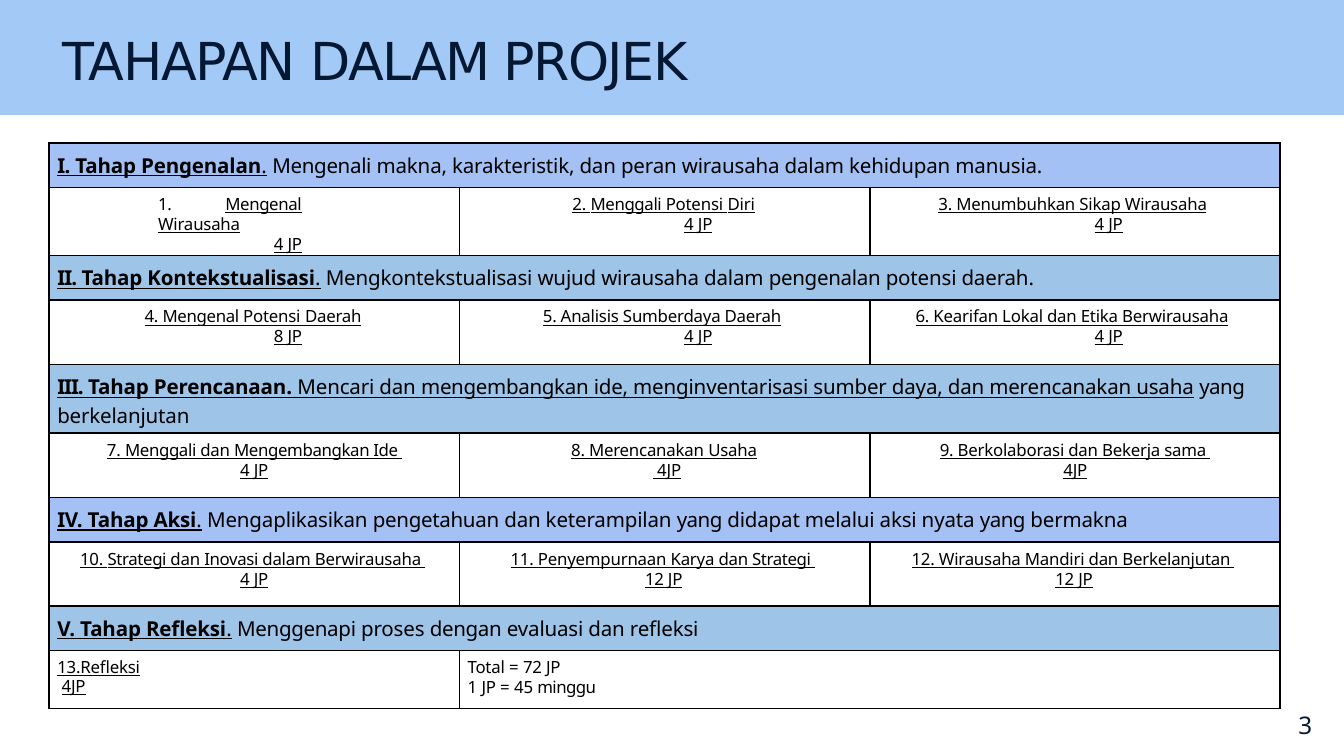
from dataclasses import dataclass
from typing import NamedTuple

from pptx import Presentation, util as u
from pptx.dml.color import RGBColor
from pptx.enum import shapes, text
from pptx.oxml import parse_xml
from pptx.oxml.ns import nsdecls


@dataclass(frozen=True)
class Theme:
    band: str = "A3CAF6"
    navy: str = "041834"
    black: str = "000000"
    blue: str = "A3C1F4"
    sky: str = "9EC4E8"
    head: str = "DejaVu Sans"
    body: str = "Noto Sans"
    title: float = 28
    number: float = 13
    stage: float = 11
    step: float = 9


class Run(NamedTuple):
    """A text run; a leading newline starts a new line, gap is letter spacing in points."""
    words: str
    gap: float = -0.1
    line: bool = True
    bold: bool = False


class Para(NamedTuple):
    runs: list[Run]
    left: float = 0.06
    hang: float = 0
    before: float = 0
    lead: float | None = 10.7
    tab: float | None = None
    right: float = 0
    align: text.PP_ALIGN = text.PP_ALIGN.LEFT


class Box(NamedTuple):
    """Percent of the slide's width and height."""
    x: float
    y: float
    w: float
    h: float


class Row(NamedTuple):
    tall: float
    cells: list[list[Para]]
    fill: str | None = None
    top: float = 0.06


T = Theme()
WIDE = u.Inches(10)
HIGH = WIDE * 9 // 16
COLS = 3


def place(box: Box) -> list[int]:
    return [round(part * size / 100) for part, size in zip(box, (WIDE, HIGH) * 2)]


def write(frame, paras: list[Para], size: float, font: str, ink: str) -> None:
    for i, item in enumerate(paras):
        para = frame.paragraphs[0] if i == 0 else frame.add_paragraph()
        para.alignment = item.align
        para.space_before = u.Pt(item.before)
        if item.lead:
            para.line_spacing = u.Pt(item.lead) if item.lead > 5 else item.lead
        props = para._p.get_or_add_pPr()
        props.set("marL", str(u.Inches(item.left)))
        props.set("marR", str(u.Inches(item.right)))
        props.set("indent", str(u.Inches(item.hang)))
        if item.tab:
            props.append(parse_xml(
                f'<a:tabLst {nsdecls("a")}><a:tab pos="{u.Inches(item.tab)}" algn="l"/></a:tabLst>'))
        for part in item.runs:
            if part.words.startswith("\n"):
                para.add_line_break()
            run = para.add_run()
            run.text = part.words.lstrip("\n")
            run.font.size, run.font.name = u.Pt(size), font
            run.font.bold, run.font.underline = part.bold, part.line
            run.font.color.rgb = RGBColor.from_string(ink)
            run._r.get_or_add_rPr().set("spc", str(round(part.gap * 100)))


def label(slide, box: Box, para: Para, size: float, font: str, top: float) -> None:
    frame = slide.shapes.add_textbox(*place(box)).text_frame
    frame.word_wrap = True
    frame.margin_left = frame.margin_right = frame.margin_bottom = 0
    frame.margin_top = u.Inches(top)
    write(frame, [para], size, font, T.navy)


def edge(cell) -> None:
    """Draw all four borders of a table cell."""
    props = cell._tc.get_or_add_tcPr()
    for i, side in enumerate(("lnL", "lnR", "lnT", "lnB")):
        props.insert(i, parse_xml(
            f'<a:{side} {nsdecls("a")} w="{u.Pt(1)}"><a:solidFill>'
            f'<a:srgbClr val="{T.black}"/></a:solidFill></a:{side}>'))


def stage(fill: str, name: list[Run], rest: list[Run], tall=0.33, lead=None) -> Row:
    runs = [run._replace(bold=True) for run in name] + rest
    return Row(tall, [[Para(runs, before=4, lead=lead)]], fill)


def plain(words: str, gap: float = -0.1) -> Run:
    return Run(words, gap, False)


def step(left: float, hours: str, *runs: Run, **more) -> list[Para]:
    total = Para([Run(hours, 0), Run(" JP")], 0.5, align=text.PP_ALIGN.CENTER)
    return [Para(list(runs), left, before=4.1, **more), total]


def hung(left: float, hang: float, *runs: Run) -> list[Para]:
    return [Para(list(runs), left, hang, 4.7, 10.5)]


DOT = Run(".")
ROWS = [
    stage(T.blue, [Run("I. ", -0.3), Run("Tahap Pengenalan")],
          [DOT, plain(" "), plain("Mengenali ", -0.2),
           plain("makna, karakteristik, dan peran wirausaha dalam kehidupan manusia.")]),
    Row(0.48, [
        step(0.81, "4", plain("1.\t"), Run("Mengenal", -0.2), Run(" Wirausaha"),
             tab=1.16, right=0.55, align=text.PP_ALIGN.JUSTIFY),
        step(0.84, "4", Run("2. "), Run("Menggali ", -0.2), Run("Potensi"), Run(" ", 0.1), Run("Diri")),
        step(0.51, "4", Run("3. Menumbuhkan Sikap Wirausaha"))]),
    stage(T.sky, [Run("II. ", -0.5), Run("Tahap Kontekstualisasi")],
          [DOT, plain(" Mengkontekstualisasi wujud wirausaha dalam "),
           plain("pengenalan ", -0.2), plain("potensi daerah.")]),
    Row(0.48, [
        step(0.71, "8", Run("4. "), Run("Mengenal ", -0.2), Run("Potensi"), Run(" ", 0.1), Run("Daerah")),
        step(0.62, "4", Run("5. Analisis Sumberdaya Daerah")),
        step(0.34, "4", Run("6. Kearifan Lokal dan Etika Berwirausaha"))]),
    stage(T.sky, [Run("III. ", -0.6), Run("Tahap Perencanaan. ")],
          [Run("Mencari dan "), Run("mengembangkan ", -0.2),
           Run("ide, menginventarisasi sumber daya, dan merencanakan usaha"),
           plain(" "), plain("yang ", -0.3), plain("berkelanjutan")], 0.51, 1.02),
    Row(0.48, [
        hung(1.42, -0.99, Run("7. "), Run("Menggali ", -0.2), Run("dan "),
             Run("Mengembangkan Ide ", -0.2), Run("\n4", 0), Run(" JP")),
        hung(1.44, -0.61, Run("8. Merencanakan"), Run(" ", -0.8), Run("Usaha"), Run("\n 4JP")),
        hung(1.44, -0.92, Run("9. Berkolaborasi dan Bekerja sama "), Run("\n4JP"))], top=0.07),
    stage(T.blue, [Run("IV. ", -0.2), Run("Tahap Aksi")],
          [DOT, plain(" Mengaplikasikan "), plain("pengetahuan ", -0.2),
           plain("dan keterampilan "), plain("yang ", -0.3),
           plain("didapat melalui aksi nyata "), plain("yang ", -0.3), plain("bermakna")]),
    Row(0.48, [
        hung(1.42, -1.19, Run("10. "), Run("Strategi ", -0.2), Run("dan "), Run("Inovasi ", -0.2),
             Run("dalam Berwirausaha "), Run("\n4", 0), Run(" JP")),
        hung(1.38, -1, Run("11. Penyempurnaan Karya dan "), Run("Strategi ", -0.2), Run("\n12 JP")),
        hung(1.38, -1.07, Run("12. Wirausaha Mandiri dan Berkelanjutan "), Run("\n12 JP"))], top=0.07),
    stage(T.sky, [Run("V. Tahap Reﬂeksi")],
          [DOT, plain(" "), plain("Menggenapi ", -0.2), plain("proses "),
           plain("dengan ", -0.2), plain("evaluasi dan reﬂeksi")]),
    Row(0.43, [
        hung(0.06, 0, Run("13.Reﬂeksi"), plain("\n "), Run("4JP")),
        [Para([plain("Total "), plain("= ", 0), plain("72 JP")], before=4.1),
         Para([plain("1 ", 0), plain("JP "), plain("= ", 0), plain("45 "), plain("minggu", -0.3)])]]),
]


def grid(slide, box: Box) -> None:
    table = slide.shapes.add_table(len(ROWS), COLS, *place(box)).table
    table.first_row = table.horz_banding = False
    for r, row in enumerate(ROWS):
        table.rows[r].height = u.Inches(row.tall)
        for cell in table.rows[r].cells:
            cell.margin_left = cell.margin_right = cell.margin_bottom = 0
            cell.margin_top = u.Inches(row.top)
            if row.fill:
                cell.fill.solid()
                cell.fill.fore_color.rgb = RGBColor.from_string(row.fill)
            else:
                cell.fill.background()
            edge(cell)
        last = len(row.cells) - 1
        if last < COLS - 1:
            table.cell(r, last).merge(table.cell(r, COLS - 1))
        for c, paras in enumerate(row.cells):
            size = T.stage if row.fill else T.step
            write(table.cell(r, c).text_frame, paras, size, T.body, T.black)


def main() -> None:
    deck = Presentation()
    deck.slide_width, deck.slide_height = WIDE, HIGH
    slide = deck.slides.add_slide(deck.slide_layouts[6])
    band = slide.shapes.add_shape(shapes.MSO_SHAPE.RECTANGLE, *place(Box(0, 0, 100, 15.2)))
    band.shadow.inherit = False
    band.fill.solid()
    band.fill.fore_color.rgb = RGBColor.from_string(T.band)
    band.line.fill.background()
    title = Para([plain("TAHAPAN ", -0.75), plain("DALAM PROJEK", -0.85)], 0.01, before=1, lead=None)
    label(slide, Box(4.55, 3.6, 47.7, 8.72), title, T.title, T.head, 0.01)
    number = Para([plain("3", 0)], 0.04, before=1.9, lead=None)
    label(slide, Box(96.2, 93.42, 2.9, 4.8), number, T.number, T.body, 0.03)
    grid(slide, Box(3.66, 18.95, 91.6, 74.4))
    deck.save("out.pptx")


if __name__ == "__main__":
    main()
